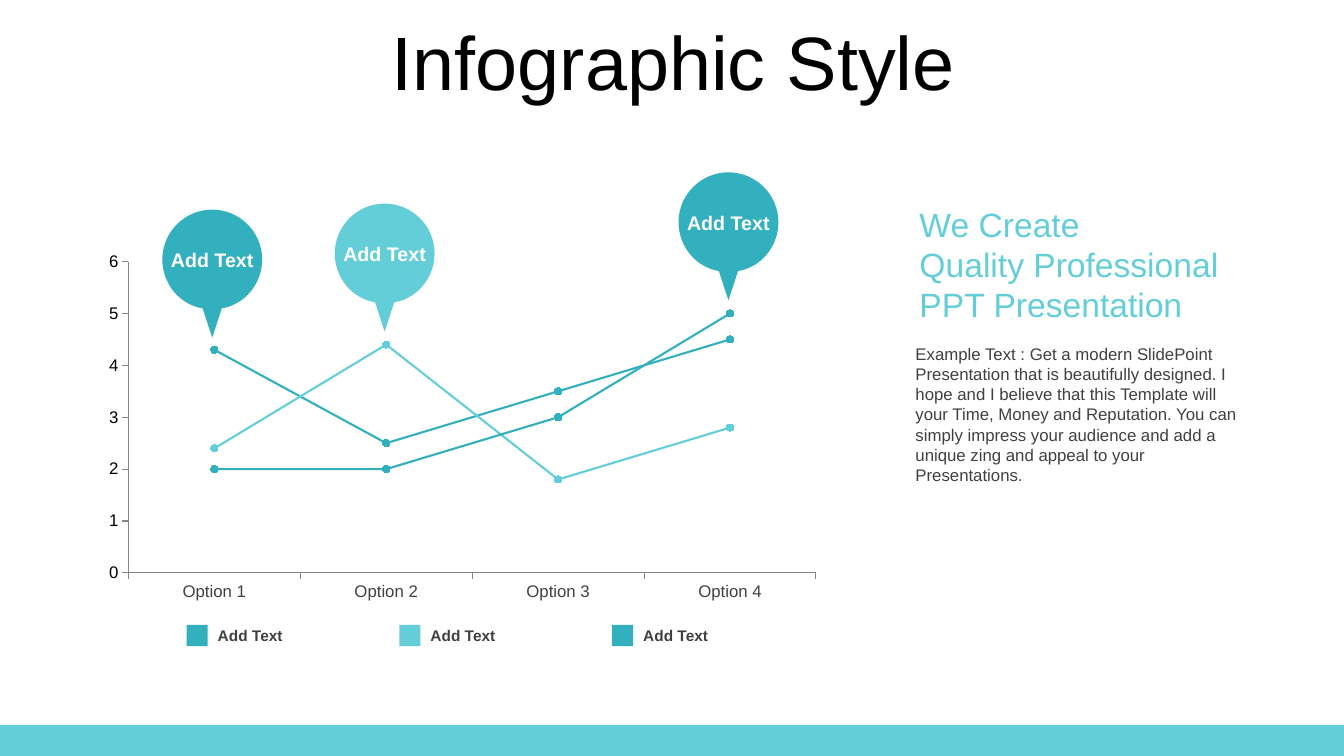
from dataclasses import dataclass

from lxml import etree
from pptx import Presentation
from pptx.chart.data import CategoryChartData
from pptx.dml.color import RGBColor
from pptx.enum.chart import XL_CHART_TYPE, XL_MARKER_STYLE, XL_TICK_MARK
from pptx.enum.shapes import MSO_SHAPE
from pptx.enum.text import MSO_ANCHOR, PP_ALIGN
from pptx.oxml.ns import qn
from pptx.util import Inches, Pt

LINE_MARKERS = XL_CHART_TYPE.LINE_MARKERS
CIRCLE = XL_MARKER_STYLE.CIRCLE
TICK_OUTSIDE = XL_TICK_MARK.OUTSIDE
RECTANGLE = MSO_SHAPE.RECTANGLE
TOP, MIDDLE = MSO_ANCHOR.TOP, MSO_ANCHOR.MIDDLE
LEFT, CENTER = PP_ALIGN.LEFT, PP_ALIGN.CENTER

FONT = "Arial"
COLORS = {
    "teal": "32B0BE",
    "aqua": "64CED8",
    "text": "404040",
    "axis": "868686",
    "black": "000000",
    "white": "FFFFFF",
}
SLIDE_WIDTH, SLIDE_HEIGHT = 13.33, 7.5
LABEL = "Add Text"

# Right half of a pin, from its top to its tail: offsets from the top centre.
PIN_HALF_WIDTH = 0.495
PIN_TIP = (0, 1.27)
PIN_RIGHT_SIDE = (
    (0, 0), (0.27, 0), (0.495, 0.22), (0.495, 0.495),
    (0.495, 0.73), (0.33, 0.94), (0.095, 0.98),
)

LEGEND_LEFT, LEGEND_TOP, LEGEND_STEP = 1.85, 6.2, 2.11
SWATCH_SIZE = 0.21


@dataclass(frozen=True)
class Series:
    name: str
    values: tuple[float, ...]
    color: str


@dataclass(frozen=True)
class Pin:
    left: float
    top: float
    color: str


@dataclass(frozen=True)
class TextStyle:
    size: float
    color: str
    bold: bool = False
    align: PP_ALIGN = LEFT
    anchor: MSO_ANCHOR = TOP
    side_inset: float = 0


CATEGORIES = ("Option 1", "Option 2", "Option 3", "Option 4")
SERIES = (
    Series("Series 1", (4.3, 2.5, 3.5, 4.5), "teal"),
    Series("Series 2", (2.4, 4.4, 1.8, 2.8), "aqua"),
    Series("Series 3", (2, 2, 3, 5), "teal"),
)
PINS = (
    Pin(1.61, 2.08, "teal"),
    Pin(6.73, 1.71, "teal"),
    Pin(3.32, 2.02, "aqua"),
)
HEADLINE = ("We Create", "Quality Professional", "PPT Presentation")
BODY = (
    "Example Text : Get a modern SlidePoint Presentation that is beautifully "
    "designed. I hope and I believe that this Template will your Time, Money and "
    "Reputation. You can simply impress your audience and add a unique zing and "
    "appeal to your Presentations."
)


def rgb(color: str) -> RGBColor:
    return RGBColor.from_string(COLORS[color])


def fill_plain(shape, color: str) -> None:
    shape.shadow.inherit = False
    shape.fill.solid()
    shape.fill.fore_color.rgb = rgb(color)
    shape.line.fill.background()


def add_block(slide, left: float, top: float, width: float, height: float, color: str):
    block = slide.shapes.add_shape(
        RECTANGLE, Inches(left), Inches(top), Inches(width), Inches(height)
    )
    fill_plain(block, color)
    return block


def write_lines(shape, lines: tuple[str, ...], style: TextStyle):
    frame = shape.text_frame
    frame.word_wrap = True
    frame.vertical_anchor = style.anchor
    frame.margin_left = frame.margin_right = Inches(style.side_inset)
    frame.margin_top = frame.margin_bottom = 0
    for index, line in enumerate(lines):
        paragraph = frame.add_paragraph() if index else frame.paragraphs[0]
        paragraph.alignment = style.align
        run = paragraph.add_run()
        run.text = line
        run.font.name = FONT
        run.font.size = Pt(style.size)
        run.font.bold = style.bold
        run.font.color.rgb = rgb(style.color)
    return frame


def add_text(slide, left: float, top: float, width: float, height: float,
             lines: tuple[str, ...], style: TextStyle):
    box = slide.shapes.add_textbox(Inches(left), Inches(top), Inches(width), Inches(height))
    return write_lines(box, lines, style)


def bend_lines(freeform, first: int) -> None:
    """Merge three line segments, counted from first, into one Bézier curve."""
    segments = list(freeform._element.iter(qn("a:lnTo")))[first:first + 3]
    curve = etree.Element(qn("a:cubicBezTo"))
    segments[0].addprevious(curve)
    for segment in segments:
        curve.append(segment[0])
        segment.getparent().remove(segment)


def add_pin(slide, pin: Pin) -> None:
    """Draw a round callout whose tail points down, with its label."""
    left_side = [(-x, y) for x, y in reversed(PIN_RIGHT_SIDE)]
    start, *outline = [
        (Inches(pin.left + PIN_HALF_WIDTH + x), Inches(pin.top + y))
        for x, y in (*PIN_RIGHT_SIDE, PIN_TIP, *left_side)
    ]
    builder = slide.shapes.build_freeform(*start)
    builder.add_line_segments(outline, close=True)
    callout = builder.convert_to_shape()
    for first in (11, 8, 3, 0):
        bend_lines(callout, first)
    fill_plain(callout, pin.color)
    label = add_block(slide, pin.left + 0.03, pin.top + 0.38, 0.93, 0.24, pin.color)
    write_lines(label, (LABEL,), TextStyle(14, "white", bold=True, align=CENTER))


def set_plot_area(chart, **fractions: float) -> None:
    """Fix the inner plot area as fractions of the chart frame."""
    plot_area = chart._chartSpace.find(".//" + qn("c:plotArea"))
    for old_layout in plot_area.findall(qn("c:layout")):
        plot_area.remove(old_layout)
    layout = etree.Element(qn("c:layout"))
    manual = etree.SubElement(layout, qn("c:manualLayout"))
    settings = {"layoutTarget": "inner", "xMode": "edge", "yMode": "edge", **fractions}
    for tag, value in settings.items():
        etree.SubElement(manual, qn(f"c:{tag}")).set("val", str(value))
    plot_area.insert(0, layout)


def style_axis(axis, color: str) -> None:
    axis.has_major_gridlines = False
    axis.major_tick_mark = TICK_OUTSIDE
    axis.format.line.color.rgb = rgb("axis")
    axis.format.line.width = Pt(0.75)
    axis.tick_labels.font.name = FONT
    axis.tick_labels.font.size = Pt(12)
    axis.tick_labels.font.color.rgb = rgb(color)


def add_line_chart(slide) -> None:
    data = CategoryChartData()
    data.categories = CATEGORIES
    for series in SERIES:
        data.add_series(series.name, series.values)
    chart = slide.shapes.add_chart(
        LINE_MARKERS, Inches(0.93), Inches(2.43), Inches(7.31), Inches(3.6), data
    ).chart
    chart.has_legend = chart.has_title = False
    chart.font.name = FONT
    chart.font.size = Pt(18)
    chart.font.color.rgb = rgb("black")
    set_plot_area(chart, x=0.047, y=0.046, w=0.933, h=0.858)

    style_axis(chart.category_axis, "text")
    style_axis(chart.value_axis, "black")
    chart.value_axis.minimum_scale = 0
    chart.value_axis.maximum_scale = 6
    chart.value_axis.major_unit = 1

    plot = chart.plots[0]
    plot.vary_by_categories = False
    for line, series in zip(plot.series, SERIES):
        line.smooth = False
        line.format.line.color.rgb = rgb(series.color)
        line.format.line.width = Pt(1.5)
        line.marker.style = CIRCLE
        line.marker.size = 5
        line.marker.format.fill.solid()
        line.marker.format.fill.fore_color.rgb = rgb(series.color)
        line.marker.format.line.color.rgb = rgb(series.color)


def main() -> None:
    deck = Presentation()
    deck.slide_width, deck.slide_height = Inches(SLIDE_WIDTH), Inches(SLIDE_HEIGHT)
    slide = deck.slides.add_slide(deck.slide_layouts[6])

    add_block(slide, 0, 7.19, SLIDE_WIDTH, 0.31, "aqua")
    title = add_text(slide, 0.35, 0.26, 12.66, 0.79, ("Infographic Style",),
                     TextStyle(54, "black", align=CENTER, anchor=MIDDLE))
    title.paragraphs[0].line_spacing = 0.9
    add_line_chart(slide)
    for pin in PINS:
        add_pin(slide, pin)
    for index, series in enumerate(SERIES):
        left = LEGEND_LEFT + index * LEGEND_STEP
        add_block(slide, left, LEGEND_TOP, SWATCH_SIZE, SWATCH_SIZE, series.color)
        add_text(slide, left + 0.31, LEGEND_TOP + 0.01, 1.1, 0.19, (LABEL,),
                 TextStyle(11, "text", bold=True))
    add_text(slide, 9.08, 2.02, 3.33, 1.21, HEADLINE, TextStyle(24, "aqua", side_inset=0.04))
    add_text(slide, 9.08, 3.41, 3.33, 1.41, (BODY,), TextStyle(12, "text"))
    deck.save("out.pptx")


if __name__ == "__main__":
    main()
